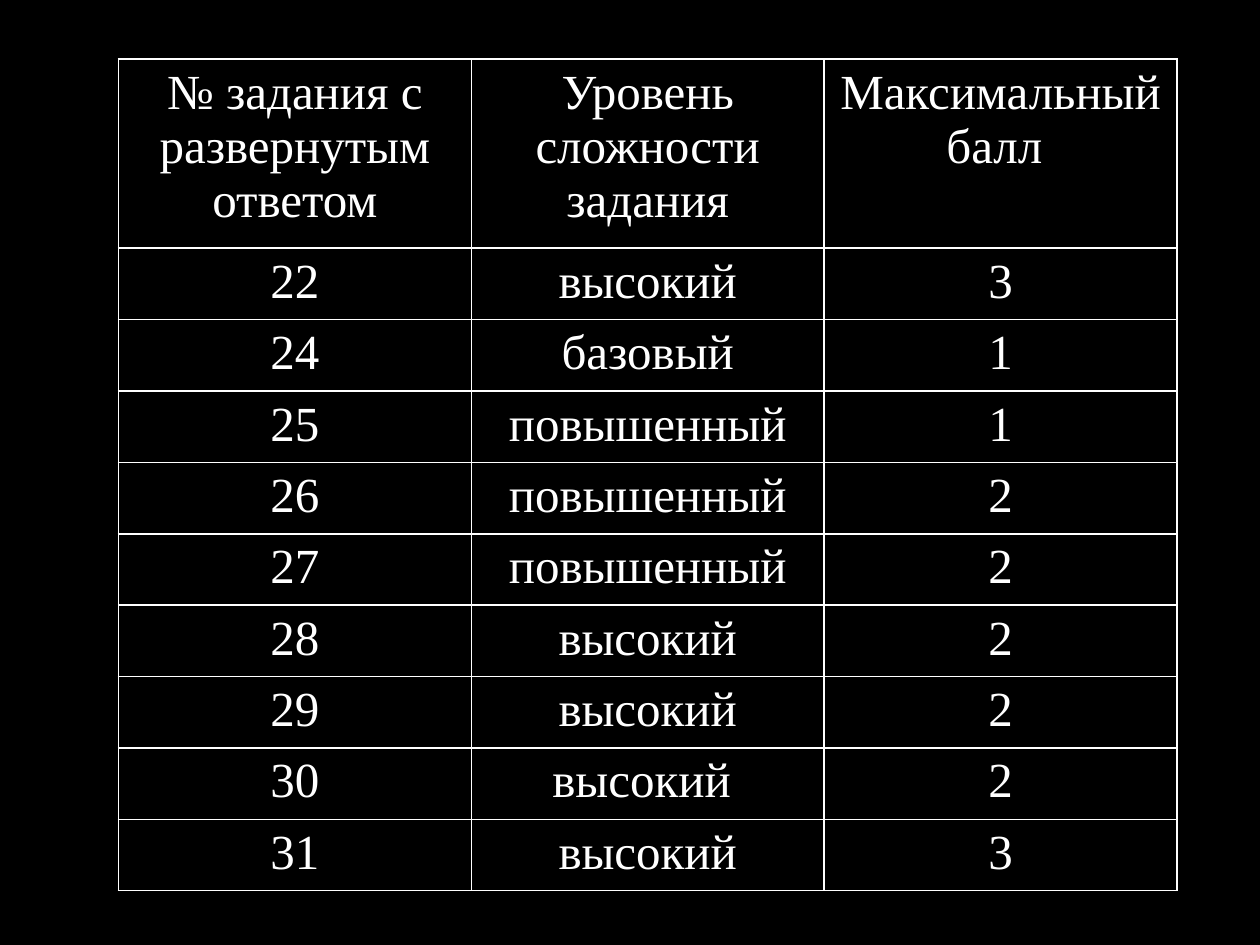
from dataclasses import dataclass

from lxml.etree import SubElement
from pptx import Presentation
from pptx.dml.color import RGBColor
from pptx.enum.text import PP_ALIGN
from pptx.oxml.ns import qn
from pptx.util import Inches, Pt


@dataclass(frozen=True)
class Theme:
    back: str = "000000"
    ink: str = "FFFFFF"
    font: str = "Times New Roman"
    size: int = 28
    rule: int = 1


THEME = Theme()

HEAD = ("№ задания с развернутым ответом", "Уровень сложности задания",
        "Максимальный балл ")
TASKS = [
    ("22", "высокий", "3"),
    ("24", "базовый", "1"),
    ("25", "повышенный", "1"),
    ("26", "повышенный", "2"),
    ("27", "повышенный", "2"),
    ("28", "высокий", "2"),
    ("29", "высокий", "2"),
    ("30", "высокий ", "2"),
    ("31", "высокий", "3"),
]


def add_rules(cell):
    """Draw the four borders of a cell, ahead of its fill."""
    props = cell._tc.get_or_add_tcPr()
    for side in ("lnL", "lnR", "lnT", "lnB"):
        line = SubElement(props, qn(f"a:{side}"), w=str(Pt(THEME.rule)))
        fill = SubElement(line, qn("a:solidFill"))
        SubElement(fill, qn("a:srgbClr"), val=THEME.ink)


def fill_cell(cell, text):
    add_rules(cell)
    cell.fill.background()
    cell.text = text
    para = cell.text_frame.paragraphs[0]
    para.alignment = PP_ALIGN.CENTER
    para.font.name = THEME.font
    para.font.size = Pt(THEME.size)
    para.font.color.rgb = RGBColor.from_string(THEME.ink)


def add_tasks(slide, left, top, width, height):
    """Place the table of tasks, levels and top scores in the box."""
    data = [HEAD, *TASKS]
    table = slide.shapes.add_table(len(data), len(HEAD),
                                   left, top, width, height).table
    table.first_row = table.horz_banding = False

    # The task rows share what the heading leaves
    head = Inches(1.5)
    step = (height - head) // len(TASKS)
    for i, row in enumerate(table.rows):
        row.height = step if i else head
        for cell, text in zip(row.cells, data[i]):
            fill_cell(cell, text)


def main():
    deck = Presentation()
    deck.slide_width, deck.slide_height = Inches(10), Inches(7.5)
    slide = deck.slides.add_slide(deck.slide_layouts[6])

    # Background
    back = slide.background.fill
    back.solid()
    back.fore_color.rgb = RGBColor.from_string(THEME.back)

    add_tasks(slide, Inches(0.94), Inches(0.47), Inches(8.4), Inches(6.6))
    deck.save("out.pptx")


if __name__ == "__main__":
    main()
